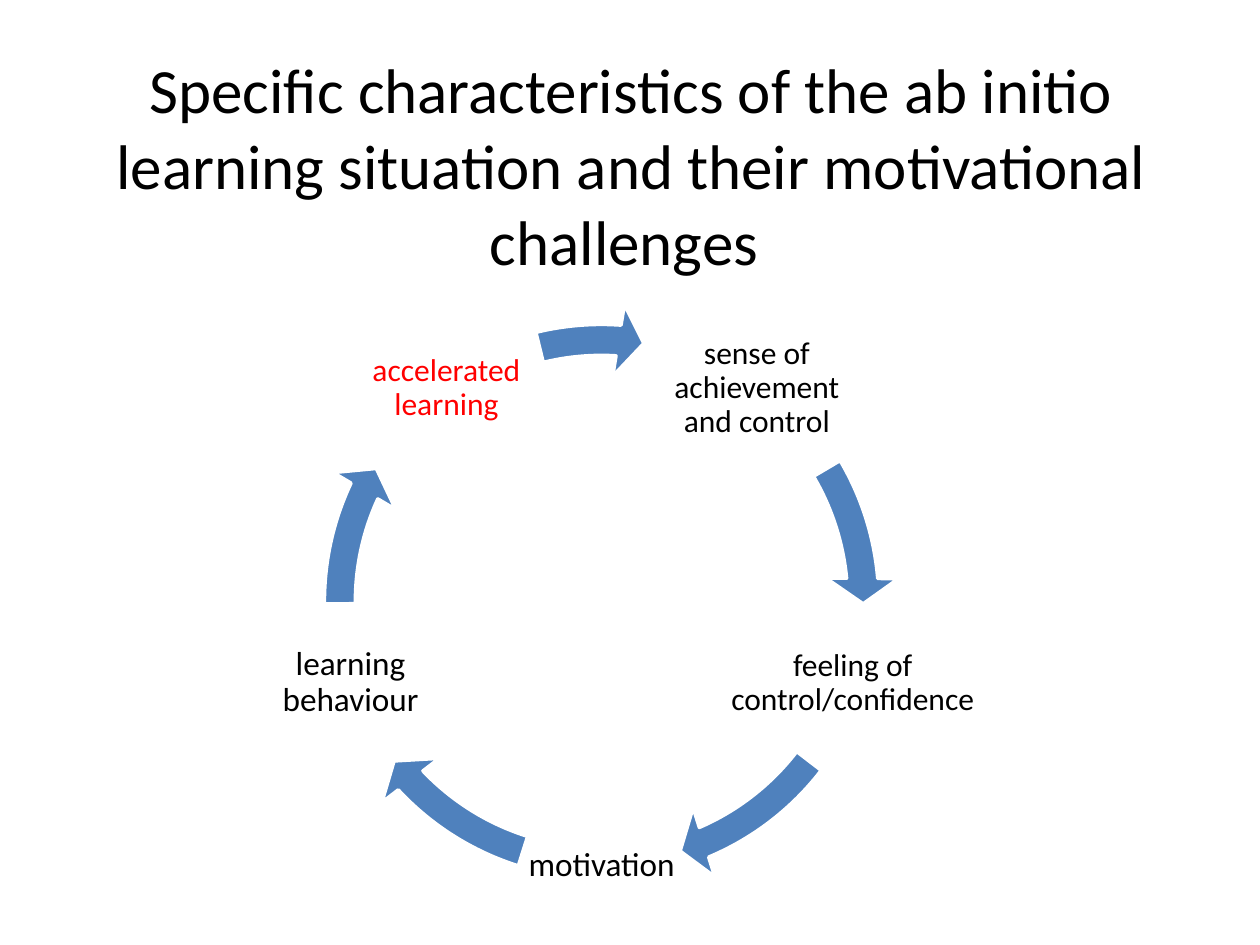
import math

import pptx
import pptx.dml.color
import pptx.enum.shapes
import pptx.enum.text
import pptx.util

Inches, Pt = pptx.util.Inches, pptx.util.Pt
RGBColor = pptx.dml.color.RGBColor
MIDDLE = pptx.enum.text.MSO_ANCHOR.MIDDLE
CENTER = pptx.enum.text.PP_ALIGN.CENTER

BLACK = RGBColor(0x00, 0x00, 0x00)
RED = RGBColor(0xFF, 0x00, 0x00)
BLUE = RGBColor(0x4F, 0x81, 0xBD)
WHITE = RGBColor(0xFF, 0xFF, 0xFF)
FONT = "Calibri"

TITLE = ("Specific characteristics of the ab initio learning situation "
         "and their motivational challenges ")

# Clockwise from upper right: text, width in inches, size, colour,
# then the head and tail angles (degrees) of the arrow that follows
STEPS = [
    ("sense of achievement and control", 1.79, 18, BLACK, 354.91, 329.42),
    ("feeling of control/confidence", 2.15, 18, BLACK, 66.94, 37.54),
    ("motivation", 1.26, 19, BLACK, 136.87, 107.47),
    ("learning behaviour", 1.26, 19, BLACK, 204.99, 179.5),
    ("accelerated learning", 1.47, 18, RED, 273.72, 256.3),
]


def add_run(p, text, size, color):
    r = p.add_run()
    r.text = text
    r.font.name = FONT
    r.font.size = Pt(size)
    r.font.color.rgb = color


def add_title(s, x, y, w, h):
    sp = s.shapes.title
    sp.left, sp.top, sp.width, sp.height = map(Inches, (x, y, w, h))
    tf = sp.text_frame
    tf.auto_size = pptx.enum.text.MSO_AUTO_SIZE.NONE
    tf.vertical_anchor = MIDDLE
    p = tf.paragraphs[0]
    p.alignment = CENTER
    add_run(p, TITLE, 36, BLACK)


def add_step(shapes, cx, cy, w, h, text, size, color):
    sp = shapes.add_textbox(*map(Inches, (cx - w / 2, cy - h / 2, w, h)))
    tf = sp.text_frame
    tf.word_wrap = True
    tf.vertical_anchor = MIDDLE
    tf.margin_left = tf.margin_right = Inches(0.03)
    tf.margin_top = tf.margin_bottom = Inches(0.03)
    p = tf.paragraphs[0]
    p.alignment = CENTER
    p.line_spacing = 0.9
    p.space_after = Pt(0.35 * size)
    add_run(p, text, size, color)


def add_arrow(shapes, x, y, side, head, tail):
    sp = shapes.add_shape(pptx.enum.shapes.MSO_SHAPE.CIRCULAR_ARROW,
                          *map(Inches, (x, y, side, side)))
    # Angles are stored in 60000ths of a degree, adjustments in 100000ths
    values = (0.052, 5.59 * 0.6, head * 0.6, tail * 0.6, 0.061)
    for i, value in enumerate(values):
        sp.adjustments[i] = value
    sp.shadow.inherit = False
    sp.fill.solid()
    sp.fill.fore_color.rgb = BLUE
    sp.line.color.rgb = WHITE
    sp.line.width = Pt(2)


def add_cycle(s, x, y, side):
    shapes = s.shapes.add_group_shape().shapes
    radius = 0.443 * side
    turn = 360 / len(STEPS)
    for i, (text, w, size, color, head, tail) in enumerate(STEPS):
        a = math.radians(turn * (i + 0.5) - 90)
        add_step(shapes, x + side / 2 + radius * math.cos(a),
                 y + side / 2 + radius * math.sin(a),
                 w, side * 4 / 15, text, size, color)
        add_arrow(shapes, x, y, side, head, tail)


def main():
    prs = pptx.Presentation()
    prs.slide_width, prs.slide_height = Inches(10), Inches(7.5)
    s = prs.slides.add_slide(prs.slide_layouts[5])
    add_title(s, 0.51, 0.68, 9, 1.25)
    add_cycle(s, 2.41, 2.41, 4.73)
    prs.save("out.pptx")


if __name__ == "__main__":
    main()
